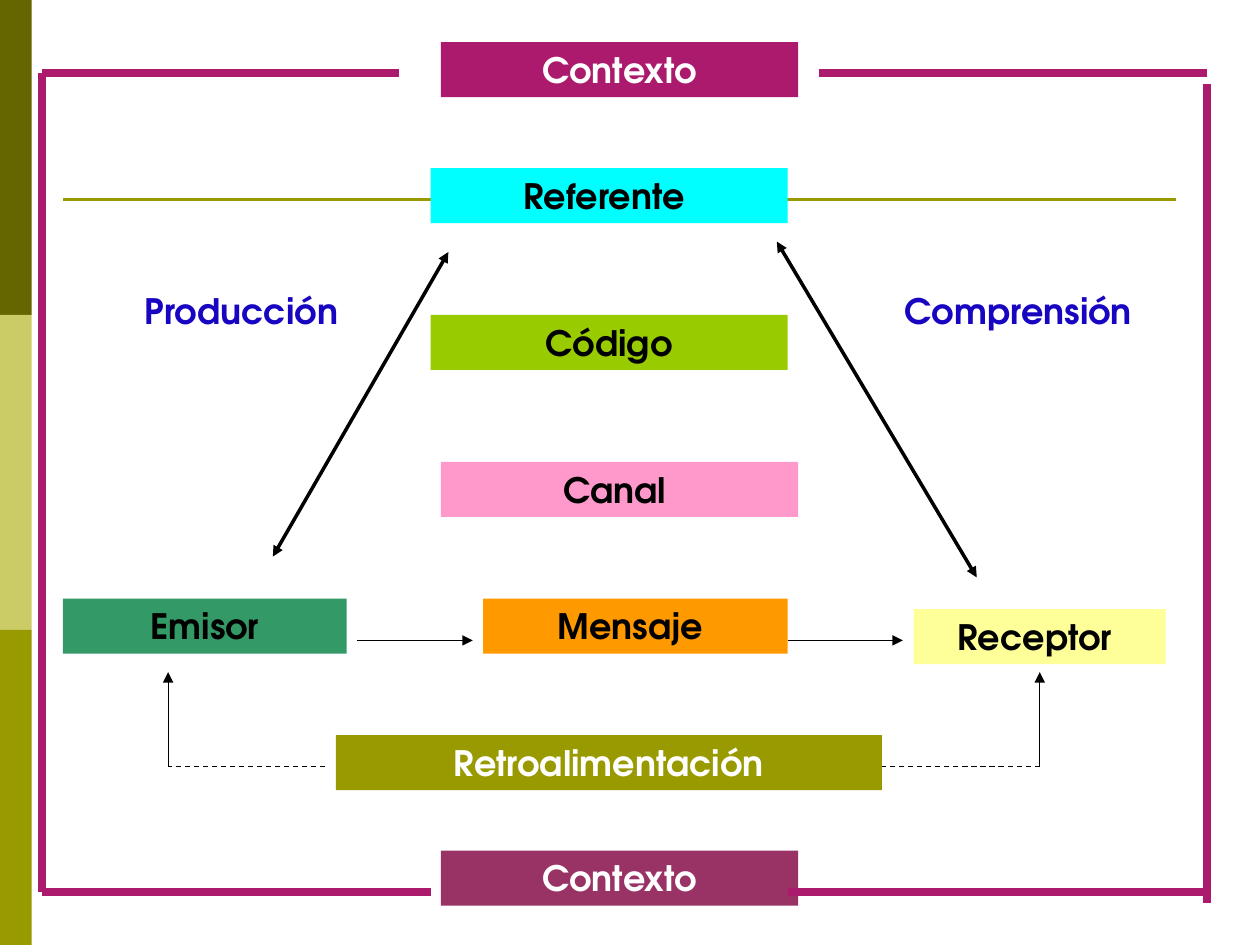
from lxml.etree import SubElement
from pptx import Presentation
from pptx.dml.color import RGBColor
from pptx.enum.dml import MSO_LINE
from pptx.enum.shapes import MSO_CONNECTOR, MSO_SHAPE
from pptx.enum.text import MSO_ANCHOR, MSO_AUTO_SIZE, PP_ALIGN
from pptx.oxml.ns import qn
from pptx.util import Cm, Pt

FONT = "TeX Gyre Adventor"
BLACK, WHITE, BLUE = "000000", "FFFFFF", "1705C1"
OLIVE, MAGENTA = "999900", "AC1A6D"
BAND_WIDTH, BAND_HEIGHT = 0.64, 6.35
BOX_HEIGHT = 1.11
BANDS = ["666600", "CCCC66", OLIVE]

# text, left, top, width, fill, text colour (lengths in cm)
BOXES = [
    ("Referente ", 8.68, 3.39, 7.2, "00FFFF", BLACK),
    ("Código", 8.68, 6.35, 7.2, "99CC00", BLACK),
    ("Canal ", 8.89, 9.31, 7.2, "FF99CC", BLACK),
    ("Mensaje ", 9.74, 12.07, 6.14, "FF9900", BLACK),
    ("Emisor", 1.27, 12.07, 5.72, "339966", BLACK),
    ("Contexto", 8.89, 0.85, 7.2, MAGENTA, WHITE),
    ("Contexto", 8.89, 17.15, 7.2, "993366", WHITE),
    ("Comprensión", 16.93, 5.72, 7.2, None, BLUE),
    ("Producción", 1.27, 5.72, 7.2, None, BLUE),
    ("Receptor ", 18.42, 12.28, 5.08, "FFFF99", BLACK),
    ("Retroalimentación", 6.77, 14.82, 11.01, OLIVE, WHITE),
]

# start x, start y, end x, end y (cm)
DIVIDER = (1.27, 4.02, 23.71, 4.02)
REFERENCE_ARROWS = [(5.5, 11.22, 9.04, 5.08), (15.66, 4.87, 19.69, 11.64)]
MESSAGE_ARROWS = [(7.2, 12.91, 9.53, 12.91), (15.88, 12.91, 18.2, 12.91)]
FEEDBACK_LINES = [(6.56, 15.45, 3.39, 15.45), (20.96, 15.45, 17.78, 15.45)]
FEEDBACK_ARROWS = [(3.39, 15.45, 3.39, 13.55), (20.96, 15.45, 20.96, 13.55)]
CONTEXT_FRAME = [
    (8.04, 1.48, 0.85, 1.48),
    (0.85, 1.48, 0.85, 17.99),
    (0.85, 17.99, 8.68, 17.99),
    (24.34, 1.48, 16.51, 1.48),
    (24.34, 1.69, 24.34, 18.2),
    (15.88, 17.99, 24.34, 17.99),
]


def color(hex_string):
    return RGBColor.from_string(hex_string)


def add_rectangle(slide, left, top, width, height, fill):
    shape = slide.shapes.add_shape(
        MSO_SHAPE.RECTANGLE, Cm(left), Cm(top), Cm(width), Cm(height))
    shape.shadow.inherit = False
    shape.fill.solid()
    shape.fill.fore_color.rgb = color(fill)
    shape.line.fill.background()
    return shape


def add_label(slide, text, left, top, width, fill, text_color):
    """Add a bold centred label, on a filled rectangle when a fill is given."""
    if fill:
        shape = add_rectangle(slide, left, top, width, BOX_HEIGHT, fill)
    else:
        shape = slide.shapes.add_textbox(Cm(left), Cm(top), Cm(width), Cm(BOX_HEIGHT))
    frame = shape.text_frame
    frame.word_wrap = True
    frame.auto_size = MSO_AUTO_SIZE.SHAPE_TO_FIT_TEXT
    frame.vertical_anchor = MSO_ANCHOR.TOP
    paragraph = frame.paragraphs[0]
    paragraph.text = text
    paragraph.alignment = PP_ALIGN.CENTER
    paragraph.font.name = FONT
    paragraph.font.size = Pt(20)
    paragraph.font.bold = True
    paragraph.font.color.rgb = color(text_color)


def add_line(slide, ends, line_color, width, arrows=(), dashed=False):
    """Draw a line; arrows names its arrowed ends, headEnd being the start."""
    connector = slide.shapes.add_connector(
        MSO_CONNECTOR.STRAIGHT, *[Cm(value) for value in ends])
    connector.line.color.rgb = color(line_color)
    connector.line.width = Pt(width)
    if dashed:
        connector.line.dash_style = MSO_LINE.DASH
    line = connector.line._get_or_add_ln()
    for end in arrows:
        SubElement(line, qn(f"a:{end}"), type="triangle")
    SubElement(connector._element.spPr, qn("a:effectLst"))


def main():
    presentation = Presentation()
    presentation.slide_width, presentation.slide_height = Cm(25.4), Cm(19.05)
    slide = presentation.slides.add_slide(presentation.slide_layouts[6])

    for index, fill in enumerate(BANDS):
        add_rectangle(slide, 0, index * BAND_HEIGHT, BAND_WIDTH, BAND_HEIGHT, fill)
    add_line(slide, DIVIDER, OLIVE, 1.5)
    for box in BOXES:
        add_label(slide, *box)
    for ends in REFERENCE_ARROWS:
        add_line(slide, ends, BLACK, 2, arrows=("headEnd", "tailEnd"))
    for ends in MESSAGE_ARROWS + FEEDBACK_ARROWS:
        add_line(slide, ends, BLACK, 0.75, arrows=("tailEnd",))
    for ends in FEEDBACK_LINES:
        add_line(slide, ends, BLACK, 0.75, dashed=True)
    for ends in CONTEXT_FRAME:
        add_line(slide, ends, MAGENTA, 4.5)

    presentation.save("out.pptx")


if __name__ == "__main__":
    main()
